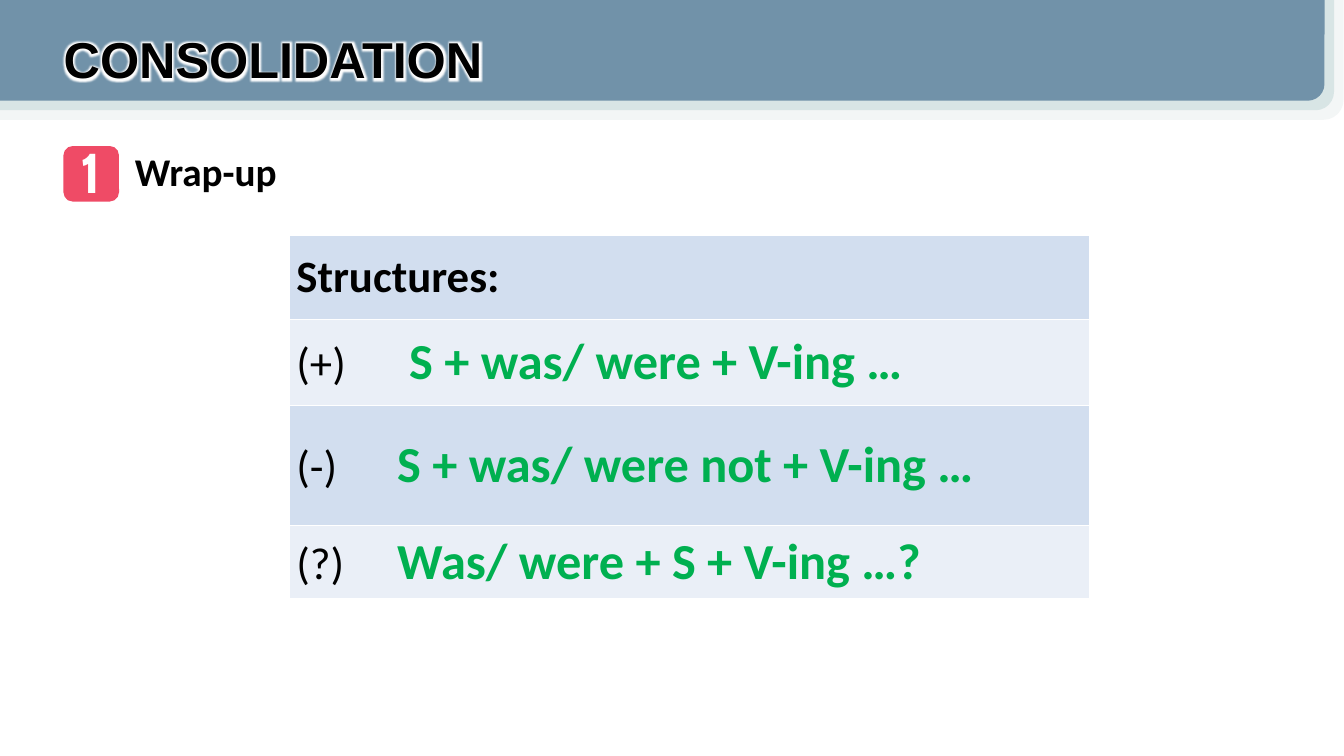
from dataclasses import dataclass

from lxml import etree
from pptx import Presentation
from pptx.dml.color import RGBColor
from pptx.enum.shapes import MSO_SHAPE
from pptx.enum.text import MSO_ANCHOR, PP_ALIGN
from pptx.oxml.ns import qn
from pptx.util import Cm, Pt

ROUND_ONE = MSO_SHAPE.ROUND_1_RECTANGLE
ROUNDED = MSO_SHAPE.ROUNDED_RECTANGLE
MIDDLE = MSO_ANCHOR.MIDDLE
LEFT, CENTER, JUSTIFY = PP_ALIGN.LEFT, PP_ALIGN.CENTER, PP_ALIGN.JUSTIFY


@dataclass(frozen=True)
class Theme:
    title_font: str = "Arial"
    body_font: str = "Calibri"
    badge_font: str = "Cabin"
    black: str = "000000"
    white: str = "FFFFFF"
    green: str = "00B050"
    badge: str = "EF4B66"
    header_bars: tuple = ("F3F6F6", "D8E5E5", "7192A9")
    bands: tuple = ("D2DEEF", "EAEFF7")
    heading_size: int = 28
    label_size: int = 32
    large_size: int = 36
    badge_size: int = 40


class SlideBuilder:
    def __init__(self, slide, theme):
        self.s = slide
        self.theme = theme

    def run(self, p, text, size, color, font, bold=True):
        r = p.add_run()
        r.text = text
        r.font.size = Pt(size)
        r.font.bold = bold
        r.font.name = font
        r.font.color.rgb = RGBColor.from_string(color)
        return r

    def shape(self, kind, left, top, width, height, color):
        sp = self.s.shapes.add_shape(kind, Cm(left), Cm(top), Cm(width), Cm(height))
        sp.shadow.inherit = False
        sp.fill.solid()
        sp.fill.fore_color.rgb = RGBColor.from_string(color)
        sp.line.fill.background()
        return sp

    def header(self):
        step = 0.24
        last = len(self.theme.header_bars) - 1
        for i, color in enumerate(self.theme.header_bars):
            extra = (last - i) * step
            bar = self.shape(ROUND_ONE, 0, 0, 33.38 + extra, 2.54 + extra, color)
            bar._element.spPr.find(qn("a:xfrm")).set("flipV", "1")

    def title(self, text, left, top, width, height):
        sp = self.s.shapes.title
        sp.left, sp.top, sp.width, sp.height = Cm(left), Cm(top), Cm(width), Cm(height)
        self.s.shapes._spTree.append(sp._element)
        sp.text_frame.vertical_anchor = MIDDLE
        p = sp.text_frame.paragraphs[0]
        p.alignment = LEFT
        r = self.run(p, text, self.theme.large_size, self.theme.black, self.theme.title_font)
        self.glow(r)

    def glow(self, r):
        effects = etree.Element(qn("a:effectLst"))
        glow = etree.SubElement(effects, qn("a:glow"), rad=str(Pt(5)))
        etree.SubElement(glow, qn("a:srgbClr"), val=self.theme.white)
        r._r.rPr.find(qn("a:solidFill")).addnext(effects)

    def text(self, text, left, top, width, height, size, color, font, align=LEFT):
        sp = self.s.shapes.add_textbox(Cm(left), Cm(top), Cm(width), Cm(height))
        sp.text_frame.word_wrap = True
        p = sp.text_frame.paragraphs[0]
        p.alignment = align
        self.run(p, text, size, color, font)

    def border(self, cell):
        tcPr = cell._tc.get_or_add_tcPr()
        for i, side in enumerate(("lnL", "lnR", "lnT", "lnB")):
            ln = etree.Element(qn(f"a:{side}"), w=str(Pt(1)))
            fill = etree.SubElement(ln, qn("a:solidFill"))
            etree.SubElement(fill, qn("a:srgbClr"), val=self.theme.white)
            tcPr.insert(i, ln)

    def tab_stop(self, p, position):
        tabs = etree.SubElement(p._p.get_or_add_pPr(), qn("a:tabLst"))
        etree.SubElement(tabs, qn("a:tab"), pos=str(Cm(position)), algn="l")

    def table(self, heading, structures, left, top, width, heights):
        t = self.theme
        frame = self.s.shapes.add_table(
            len(heights), 1, Cm(left), Cm(top), Cm(width), Cm(sum(heights)))
        table = frame.table
        for i, height in enumerate(heights):
            table.rows[i].height = Cm(height)
            cell = table.cell(i, 0)
            cell.fill.solid()
            cell.fill.fore_color.rgb = RGBColor.from_string(t.bands[i % 2])
            cell.vertical_anchor = MIDDLE
            cell.margin_left = cell.margin_right = Cm(0.18)
            cell.margin_top = cell.margin_bottom = 0
            self.border(cell)
            p = cell.text_frame.paragraphs[0]
            if i == 0:
                self.run(p, heading, t.label_size, t.black, t.body_font)
                continue
            sign, formula, tab = structures[i - 1]
            p.alignment = JUSTIFY
            self.tab_stop(p, tab)
            self.run(p, f"{sign}\t", t.label_size, t.black, t.body_font, bold=False)
            self.run(p, formula, t.large_size, t.green, t.body_font)


def main():
    prs = Presentation()
    prs.slide_width, prs.slide_height = Cm(33.87), Cm(19.05)
    t = Theme()
    b = SlideBuilder(prs.slides.add_slide(prs.slide_layouts[5]), t)

    b.header()
    b.title("CONSOLIDATION", 1.35, 0.58, 11.48, 1.8)
    b.text("Wrap-up", 3.15, 3.58, 30.05, 1.45, t.heading_size, t.black, t.body_font)
    b.shape(ROUNDED, 1.6, 3.68, 1.4, 1.4, t.badge)
    b.text("1", 1.75, 3.33, 1.09, 1.96, t.badge_size, t.white, t.badge_font, CENTER)
    b.table(
        "Structures:",
        [
            ("(+)", "S + was/ were + V-ing …", 2.84),
            ("(-)", "S + was/ were not + V-ing …", 2.54),
            ("(?)", "Was/ were + S + V-ing …?", 2.54),
        ],
        7.29, 5.92, 20.17, (2.13, 2.16, 3.04, 1.83))
    prs.save("out.pptx")


if __name__ == "__main__":
    main()
